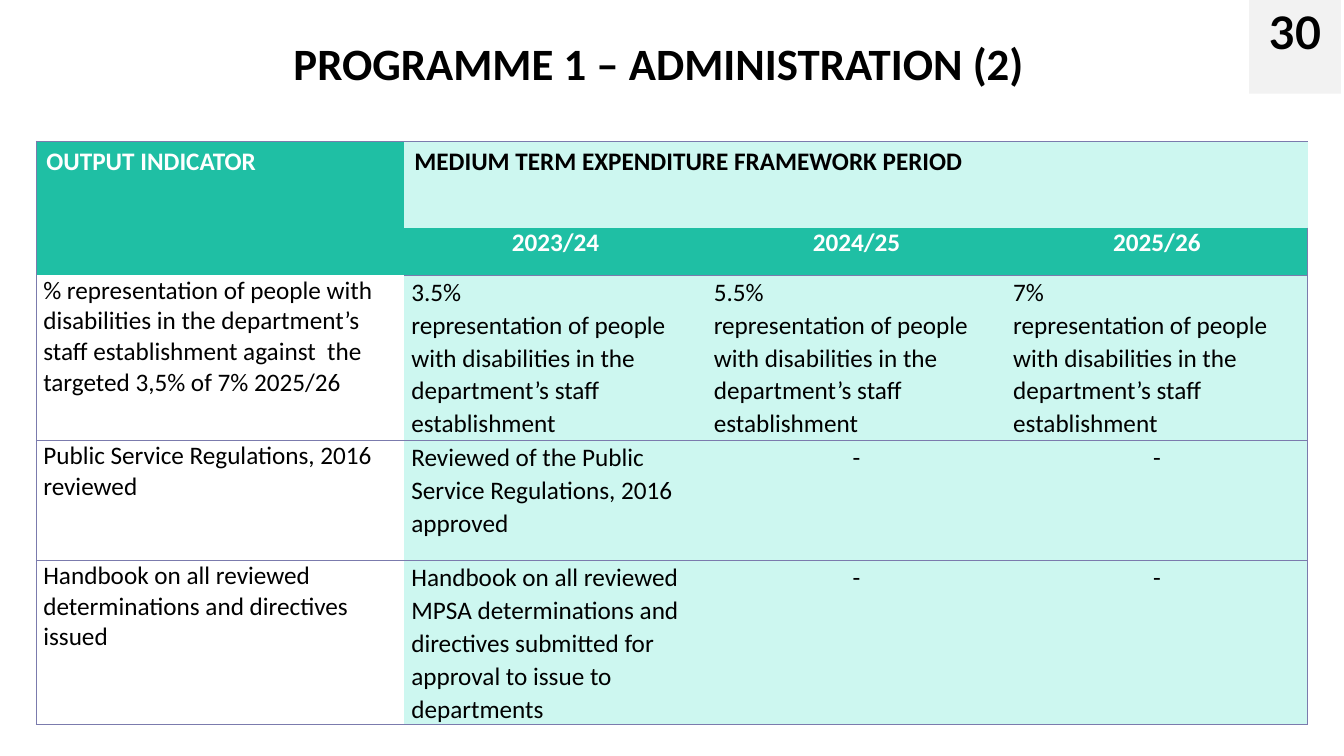
from dataclasses import dataclass

from lxml import etree
from pptx import Presentation
from pptx.dml.color import RGBColor
from pptx.enum.shapes import MSO_SHAPE as Shape
from pptx.enum.text import MSO_ANCHOR as Anchor, PP_ALIGN as Align
from pptx.oxml.ns import qn
from pptx.util import Inches, Pt


@dataclass(frozen=True)
class Theme:
    black: str = "000000"
    white: str = "FFFFFF"
    teal: str = "1FBFA4"
    mint: str = "CDF7F0"
    grey: str = "F2F2F2"
    rule: str = "7B7BAD"
    body_font: str = "Calibri"
    number_font: str = "Lato"
    title_size: int = 32
    body_size: int = 18
    rule_width: float = 0.5


THEME = Theme()

COLUMNS = (3.65, 3, 2.97, 2.99)
ROWS = (0.86, 0.47, 1.64, 1.19, 1.63)
YEARS = ("2023/24", "2024/25", "2025/26")
REPRESENTATION = "representation of people with disabilities in the department’s staff establishment"
INDICATORS = (
    ("% representation of people with disabilities in the department’s staff "
     "establishment against  the targeted 3,5% of 7% 2025/26",
     *(f"{share}\n{REPRESENTATION}" for share in ("3.5%", "5.5%", "7%"))),
    ("Public Service Regulations, 2016 reviewed",
     "Reviewed of the Public Service Regulations, 2016 approved", "-", "-"),
    ("Handbook on all reviewed determinations and directives issued",
     "Handbook on all reviewed MPSA determinations and directives submitted "
     "for approval to issue to departments", "-", "-"),
)


def write(frame, text, size=THEME.body_size, color=THEME.black, bold=False,
          align=Align.LEFT, spacing=1.0, font=THEME.body_font):
    frame.word_wrap = True
    frame.text = text
    for para in frame.paragraphs:
        para.alignment = align
        para.line_spacing = spacing
        para.font.name = font
        para.font.size = Pt(size)
        para.font.bold = bold
        para.font.color.rgb = RGBColor.from_string(color)


def set_borders(cell, visible):
    """Rule the sides named in visible (L, R, T, B) and clear the others."""
    properties = cell._tc.get_or_add_tcPr()
    for index, side in enumerate("LRTB"):
        line = etree.Element(qn(f"a:ln{side}"), w=str(Pt(THEME.rule_width)))
        if side in visible:
            fill = etree.SubElement(line, qn("a:solidFill"))
            etree.SubElement(fill, qn("a:srgbClr"), val=THEME.rule)
        else:
            etree.SubElement(line, qn("a:noFill"))
        properties.insert(index, line)


def visible_sides(row, column):
    """Outer frame, plus rules above each body row except the first label."""
    last_row, last_column = len(ROWS) - 1, len(COLUMNS) - 1
    sides = {"L"} if column == 0 else set()
    if column == last_column:
        sides.add("R")
    if row in (0, 3, 4) or (row == 2 and column > 0):
        sides.add("T")
    if row in (2, 3, last_row) or (row == 1 and column > 0):
        sides.add("B")
    return sides


def fill_cell(cell, text, fill=None, tight=True, **style):
    if fill:
        cell.fill.solid()
        cell.fill.fore_color.rgb = RGBColor.from_string(fill)
    else:
        cell.fill.background()
    if tight:
        cell.margin_left = cell.margin_right = Inches(0.07)
        cell.margin_top = cell.margin_bottom = 0
    write(cell.text_frame, text, **style)


def add_title(page, left, top, width, height):
    box = page.shapes.add_textbox(*map(Inches, (left, top, width, height)))
    box.text_frame.vertical_anchor = Anchor.MIDDLE
    write(box.text_frame, "PROGRAMME 1 – ADMINISTRATION (2)", THEME.title_size,
          bold=True, align=Align.CENTER, spacing=0.9)


def add_page_number(page, left, top, width, height):
    box = page.shapes.add_shape(Shape.RECTANGLE, *map(Inches, (left, top, width, height)))
    box.shadow.inherit = False
    box.fill.solid()
    box.fill.fore_color.rgb = RGBColor.from_string(THEME.grey)
    box.line.fill.background()
    box.text_frame.vertical_anchor = Anchor.TOP
    write(box.text_frame, "30", THEME.title_size, bold=True,
          align=Align.CENTER, font=THEME.number_font)


def add_indicator_table(page, left, top, width, height):
    table = page.shapes.add_table(
        len(ROWS), len(COLUMNS), *map(Inches, (left, top, width, height))).table
    table.first_row = table.horz_banding = False
    for column, size in zip(table.columns, COLUMNS):
        column.width = Inches(size)
    for row, size in zip(table.rows, ROWS):
        row.height = Inches(size)

    # Header rows
    table.cell(0, 0).merge(table.cell(1, 0))
    table.cell(0, 1).merge(table.cell(0, 3))
    fill_cell(table.cell(0, 0), "OUTPUT INDICATOR", THEME.teal, tight=False,
              color=THEME.white, bold=True)
    fill_cell(table.cell(0, 1), "MEDIUM TERM EXPENDITURE FRAMEWORK PERIOD",
              THEME.mint, tight=False, bold=True)
    for column, year in enumerate(YEARS, 1):
        fill_cell(table.cell(1, column), year, THEME.teal, color=THEME.white,
                  bold=True, align=Align.CENTER)

    # Indicators and yearly targets
    for row, (label, *targets) in enumerate(INDICATORS, 2):
        fill_cell(table.cell(row, 0), label)
        for column, target in enumerate(targets, 1):
            align = Align.CENTER if target == "-" else Align.LEFT
            fill_cell(table.cell(row, column), target, THEME.mint,
                      align=align, spacing=1.07)

    # Rules
    for row in range(len(ROWS)):
        for column in range(len(COLUMNS)):
            set_borders(table.cell(row, column), visible_sides(row, column))


def main():
    deck = Presentation()
    deck.slide_width, deck.slide_height = Inches(13.33), Inches(7.5)
    page = deck.slides.add_slide(deck.slide_layouts[6])
    add_title(page, 0.92, 0.17, 11.23, 0.97)
    add_indicator_table(page, 0.36, 1.4, sum(COLUMNS), sum(ROWS))
    add_page_number(page, 12.39, 0, 0.91, 0.93)
    deck.save("out.pptx")


if __name__ == "__main__":
    main()
